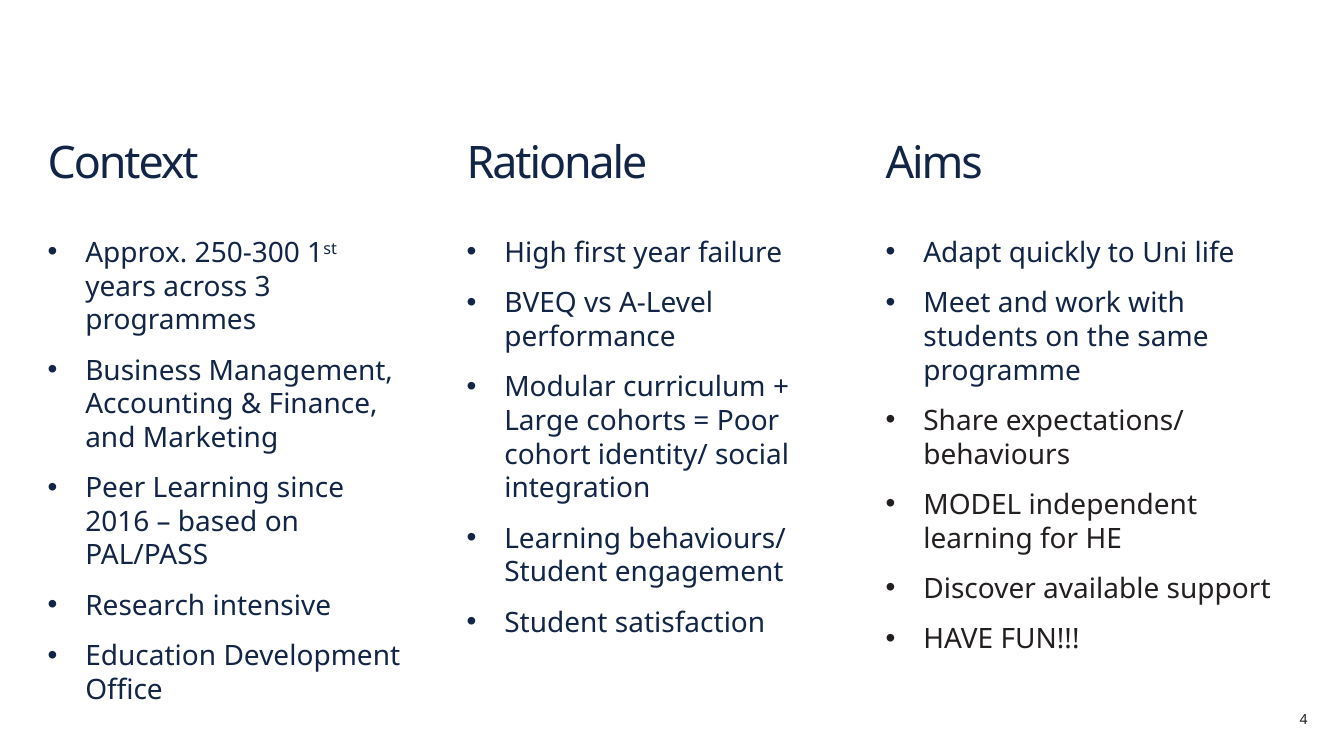
from dataclasses import dataclass

from lxml import etree
from pptx import Presentation
from pptx.dml.color import RGBColor
from pptx.enum.shapes import MSO_SHAPE
from pptx.enum.text import MSO_ANCHOR, PP_ALIGN
from pptx.oxml.ns import qn
from pptx.util import Cm, Pt

RECTANGLE = MSO_SHAPE.RECTANGLE
TOP, MIDDLE, BOTTOM = MSO_ANCHOR.TOP, MSO_ANCHOR.MIDDLE, MSO_ANCHOR.BOTTOM
LEFT, RIGHT = PP_ALIGN.LEFT, PP_ALIGN.RIGHT


@dataclass(frozen=True)
class Theme:
    """Colours, type sizes and font of the deck."""
    font: str = "Noto Sans"
    navy: RGBColor = RGBColor(0x12, 0x25, 0x46)
    dark: RGBColor = RGBColor(0x23, 0x1F, 0x20)
    panel: RGBColor = RGBColor(0xFF, 0xFF, 0xFF)
    panel_alpha: int = 80000
    heading_size: int = 32
    body_size: int = 20
    body_leading: int = 24
    body_gap: int = 12
    number_size: int = 10


THEME = Theme()

COLUMNS = [
    ("Context", 9.44, [
        ("Approx. 250-300 1^st^ years across 3 programmes", THEME.navy),
        ("Business Management, Accounting & Finance, and Marketing", THEME.navy),
        ("Peer Learning since 2016 – based on PAL/PASS", THEME.navy),
        ("Research intensive", THEME.navy),
        ("Education Development Office", THEME.navy),
    ]),
    ("Rationale", 9.44, [
        ("High first year failure", THEME.navy),
        ("BVEQ vs A-Level performance", THEME.navy),
        ("Modular curriculum + Large cohorts = Poor cohort identity/ social integration",
         THEME.navy),
        ("Learning behaviours/ Student engagement", THEME.navy),
        ("Student satisfaction", THEME.navy),
    ]),
    ("Aims", 10.39, [
        ("Adapt quickly to Uni life", THEME.navy),
        ("Meet and work with students on the same programme", THEME.navy),
        ("Share expectations/ behaviours", THEME.dark),
        ("MODEL independent learning for HE", THEME.dark),
        ("Discover available support", THEME.dark),
        ("HAVE FUN!!!", THEME.dark),
    ]),
]


def write_text(para, text, size, color, align=LEFT, tracking=None):
    """Write text into a paragraph, raising what stands between carets."""
    para.alignment = align
    for index, part in enumerate(text.split("^")):
        run = para.add_run()
        run.text = part
        run.font.name = THEME.font
        run.font.size = Pt(size)
        run.font.color.rgb = color
        properties = run._r.get_or_add_rPr()
        if index % 2:
            properties.set("baseline", "30000")
        if tracking is not None:
            properties.set("spc", str(tracking))


def set_frame(frame, anchor, side, top, bottom):
    """Set wrapping, anchor and insets in centimetres."""
    frame.word_wrap = True
    frame.vertical_anchor = anchor
    frame.margin_left = frame.margin_right = Cm(side)
    frame.margin_top, frame.margin_bottom = Cm(top), Cm(bottom)


def add_panel(page, left, top, width, height):
    """Add a translucent white rectangle and return its text frame."""
    panel = page.shapes.add_shape(RECTANGLE, Cm(left), Cm(top), Cm(width), Cm(height))
    panel.shadow.inherit = False
    panel.fill.solid()
    panel.fill.fore_color.rgb = THEME.panel
    color = panel._element.spPr.find(qn("a:solidFill")).find(qn("a:srgbClr"))
    etree.SubElement(color, qn("a:alpha"), val=str(THEME.panel_alpha))
    panel.line.fill.background()
    return panel.text_frame


def add_bullet(para):
    """Give a paragraph a round bullet with a hanging indent."""
    properties = para._p.get_or_add_pPr()
    indent = Cm(0.95)
    properties.set("marL", str(indent))
    properties.set("indent", str(-indent))
    etree.SubElement(properties, qn("a:buFont"), typeface="Arial")
    etree.SubElement(properties, qn("a:buChar"), char="•")
    para.line_spacing = Pt(THEME.body_leading)
    para.space_after = Pt(THEME.body_gap)


def add_column(page, left, top, width, heading, items):
    """Place a heading and its bullet list below it."""
    frame = add_panel(page, left, top, width, 2.59)
    set_frame(frame, BOTTOM, side=0.2, top=0, bottom=0)
    write_text(frame.paragraphs[0], heading, THEME.heading_size, THEME.navy, tracking=-150)

    frame = add_panel(page, left, top + 3.58, width, 12.19)
    set_frame(frame, TOP, side=0.2, top=0.2, bottom=0.2)
    for index, (text, color) in enumerate(items):
        para = frame.add_paragraph() if index else frame.paragraphs[0]
        add_bullet(para)
        write_text(para, text, THEME.body_size, color)


def add_page_number(page, left, top, width, height, number):
    """Place the page number at the right of its box."""
    box = page.shapes.add_textbox(Cm(left), Cm(top), Cm(width), Cm(height))
    set_frame(box.text_frame, MIDDLE, side=0.25, top=0, bottom=0)
    write_text(box.text_frame.paragraphs[0], number, THEME.number_size, THEME.dark, align=RIGHT)


def main():
    """Build the three-column page and save the deck."""
    deck = Presentation()
    deck.slide_width, deck.slide_height = Cm(33.87), Cm(19.05)
    page = deck.slides.add_slide(deck.slide_layouts[6])
    for index, (heading, width, items) in enumerate(COLUMNS):
        add_column(page, 1 + 10.56 * index, 2.13, width, heading, items)
    add_page_number(page, 30.53, 17.78, 2.67, 0.69, "4")
    deck.save("out.pptx")


if __name__ == "__main__":
    main()
